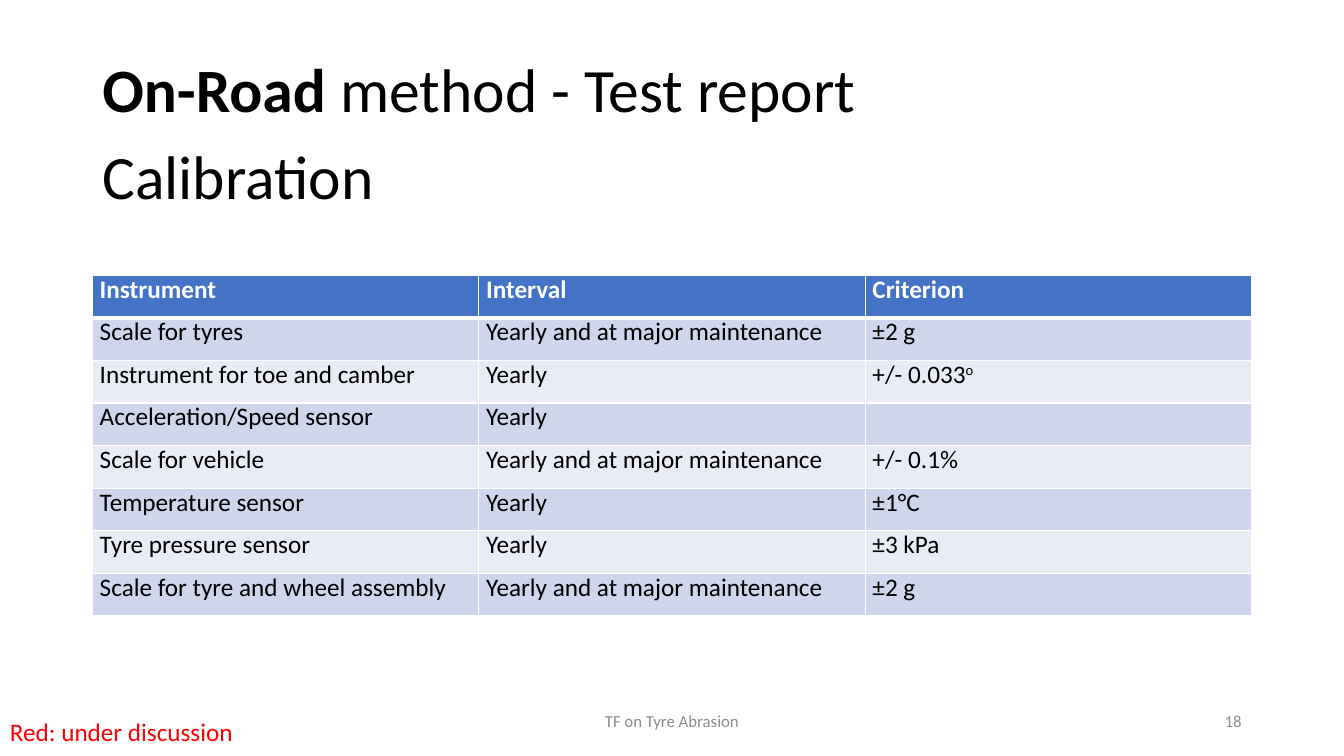
from dataclasses import dataclass

from lxml.etree import SubElement
from pptx import Presentation
from pptx.dml.color import RGBColor
from pptx.enum.text import MSO_ANCHOR, PP_ALIGN
from pptx.oxml.ns import qn
from pptx.util import Emu, Pt


@dataclass(frozen=True)
class Theme:
    """Colours, font and type sizes of the slide."""
    font: str = "Calibri"
    black: str = "000000"
    white: str = "FFFFFF"
    grey: str = "8C8C8C"
    red: str = "FF0000"
    header: str = "4472C4"
    bands: tuple = ("CFD5EA", "E9EBF5")
    title: int = 44
    body: int = 18
    footer: int = 12


THEME = Theme()
ROWS = [
    ("Instrument", "Interval", "Criterion"),
    ("Scale for tyres", "Yearly and at major maintenance", "±2 g"),
    ("Instrument for toe and camber", "Yearly", "+/- 0.033^o"),
    ("Acceleration/Speed sensor", "Yearly", ""),
    ("Scale for vehicle", "Yearly and at major maintenance", "+/- 0.1%"),
    ("Temperature sensor", "Yearly", "±1°C"),
    ("Tyre pressure sensor", "Yearly", "±3 kPa"),
    ("Scale for tyre and wheel assembly", "Yearly and at major maintenance", "±2 g"),
]


def px(n):
    """Turn pixels, 96 to the inch, into EMU."""
    return Emu(n * 9525)


def write(p, text, size=THEME.body, color=THEME.black, bold=False, raised=False):
    """Add a formatted run to a paragraph."""
    r = p.add_run()
    r.text = text
    r.font.name = THEME.font
    r.font.size = Pt(size)
    r.font.bold = bold
    r.font.color.rgb = RGBColor.from_string(color)
    if raised:
        r.font._element.set("baseline", "30000")


def add_box(slide, x, y, w, h, align=PP_ALIGN.LEFT, wrap=True):
    """Add a text box centred vertically and return its text frame."""
    tf = slide.shapes.add_textbox(px(x), px(y), px(w), px(h)).text_frame
    tf.word_wrap = wrap
    tf.vertical_anchor = MSO_ANCHOR.MIDDLE
    tf.paragraphs[0].alignment = align
    return tf


def add_title(slide):
    """Add the two-line title."""
    tf = add_box(slide, 88, 38, 1104, 183)
    p = tf.paragraphs[0]
    write(p, "On-Road", THEME.title, bold=True)
    write(p, " method - Test report", THEME.title)
    p.line_spacing = 0.9
    p = tf.add_paragraph()
    write(p, "Calibration", THEME.title)
    p.line_spacing = 0.9
    p.space_before = Pt(15)


def set_borders(cell, top, bottom):
    """Draw white cell borders with the given top and bottom widths in points."""
    tc_pr = cell._tc.get_or_add_tcPr()
    for side, width in (("L", 1), ("R", 1), ("T", top), ("B", bottom)):
        ln = SubElement(tc_pr, qn(f"a:ln{side}"), w=str(Pt(width)))
        fill = SubElement(ln, qn("a:solidFill"))
        SubElement(fill, qn("a:srgbClr"), val=THEME.white)


def fill_cell(cell, text, row):
    """Format one table cell and write its text."""
    header = row == 0
    set_borders(cell, 3 if row == 1 else 1, 3 if header else 1)
    cell.fill.solid()
    fill = THEME.header if header else THEME.bands[(row - 1) % 2]
    cell.fill.fore_color.rgb = RGBColor.from_string(fill)
    cell.vertical_anchor = MSO_ANCHOR.MIDDLE
    cell.margin_left = cell.margin_right = px(7)
    cell.margin_top = cell.margin_bottom = 0
    p = cell.text_frame.paragraphs[0]
    p.alignment = PP_ALIGN.JUSTIFY
    p.line_spacing = Pt(12)
    p.font.size = Pt(THEME.body)
    base, _, raised = text.partition("^")
    color = THEME.white if header else THEME.black
    if base:
        write(p, base, color=color, bold=header)
    if raised:
        write(p, raised, color=color, raised=True)


def add_calibration_table(slide):
    """Add the table of instruments, intervals and criteria."""
    n_rows, n_cols = len(ROWS), len(ROWS[0])
    width, height = px(1104), px(325)
    table = slide.shapes.add_table(n_rows, n_cols, px(88), px(262), width, height).table
    for column in table.columns:
        column.width = width // n_cols
    for i, texts in enumerate(ROWS):
        table.rows[i].height = height // n_rows
        for j, text in enumerate(texts):
            fill_cell(table.cell(i, j), text, i)


def add_footer(slide):
    """Add the footer, the slide number and the colour note."""
    for text, x, w, align in (("TF on Tyre Abrasion", 424, 432, PP_ALIGN.CENTER),
                              ("18", 904, 288, PP_ALIGN.RIGHT)):
        tf = add_box(slide, x, 667, w, 38, align)
        write(tf.paragraphs[0], text, THEME.footer, THEME.grey)
    tf = add_box(slide, 0, 677, 234, 39, wrap=False)
    write(tf.paragraphs[0], "Red: under discussion", color=THEME.red)


def main():
    """Build the slide and save it."""
    prs = Presentation()
    prs.slide_width, prs.slide_height = px(1280), px(720)
    slide = prs.slides.add_slide(prs.slide_layouts[6])
    add_title(slide)
    add_calibration_table(slide)
    add_footer(slide)
    prs.save("out.pptx")


if __name__ == "__main__":
    main()
